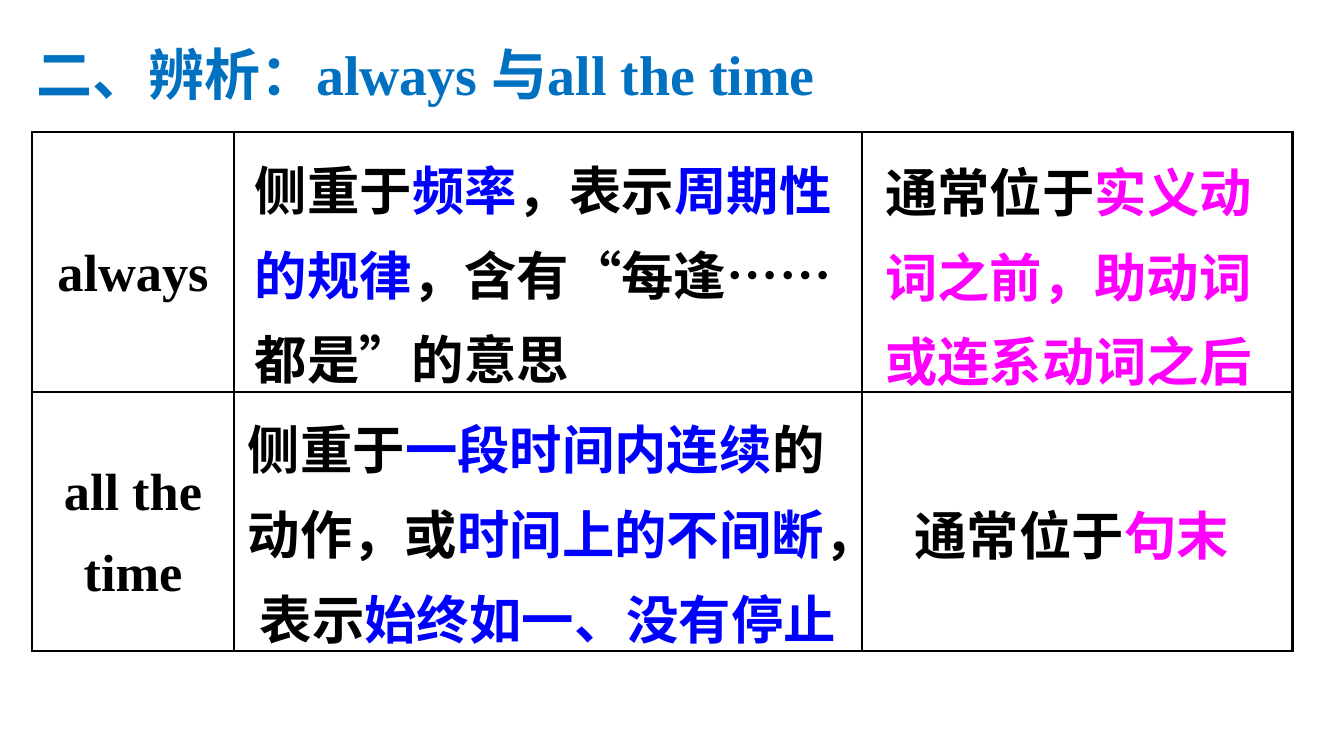
import pptx
import pptx.util
import pptx.dml.color
import pptx.enum.lang
import pptx.enum.text
import pptx.oxml.ns
import lxml.etree

Inches = pptx.util.Inches
Pt = pptx.util.Pt
RGBColor = pptx.dml.color.RGBColor
PP_ALIGN = pptx.enum.text.PP_ALIGN
MSO_ANCHOR = pptx.enum.text.MSO_ANCHOR
qn = pptx.oxml.ns.qn

BLACK = RGBColor(0x00, 0x00, 0x00)
BLUE = RGBColor(0x00, 0x00, 0xFF)
MAGENTA = RGBColor(0xFF, 0x00, 0xFF)
TITLE_BLUE = RGBColor(0x00, 0x70, 0xC0)
LATIN_FONT = "Times New Roman"
CHINESE_FONT = "Noto Sans CJK SC"


def style_paragraph(para, size, color, spacing, align):
    para.alignment = align
    para.line_spacing = spacing
    font = para.font
    font.size = Pt(size)
    font.bold = True
    font.color.rgb = color
    font.name = LATIN_FONT
    font.language_id = pptx.enum.lang.MSO_LANGUAGE_ID.SIMPLIFIED_CHINESE
    latin = para._p.pPr.find(qn("a:defRPr")).find(qn("a:latin"))
    east_asian = lxml.etree.Element(qn("a:ea"), typeface=CHINESE_FONT)
    latin.addnext(east_asian)


def set_border(cell, side, width):
    properties = cell._tc.get_or_add_tcPr()
    line = lxml.etree.SubElement(properties, qn("a:" + side), w=str(Pt(width)))
    fill = lxml.etree.SubElement(line, qn("a:solidFill"))
    lxml.etree.SubElement(fill, qn("a:srgbClr"), val=str(BLACK))


deck = pptx.Presentation()
deck.slide_width = Inches(13.33)
deck.slide_height = Inches(7.5)
page = deck.slides.add_slide(deck.slide_layouts[5])

title = page.shapes.title
title.left, title.top = Inches(0.26), Inches(0.34)
title.width, title.height = Inches(8.71), Inches(0.77)
title.text_frame.text = "二、辨析：always 与all the time"
title.text_frame.auto_size = pptx.enum.text.MSO_AUTO_SIZE.NONE
title.text_frame.vertical_anchor = MSO_ANCHOR.TOP
style_paragraph(title.text_frame.paragraphs[0], 40, TITLE_BLUE, 1.0, PP_ALIGN.LEFT)

terms = ["always", "all the time"]
column_widths = [2, 6.23, 4.27]
row_heights = [2.58, 2.57]
table = page.shapes.add_table(
    len(terms), len(column_widths), Inches(0.32), Inches(1.31), Inches(12.5), Inches(5.15)
).table
table.first_row = False
table.horz_banding = False
for column, width in zip(table.columns, column_widths):
    column.width = Inches(width)
for row, height in zip(table.rows, row_heights):
    row.height = Inches(height)

last_row = len(row_heights) - 1
last_column = len(column_widths) - 1
for row_index, term in enumerate(terms):
    for column_index in range(len(column_widths)):
        cell = table.cell(row_index, column_index)
        set_border(cell, "lnL", 2 if column_index == 0 else 1)
        set_border(cell, "lnR", 2 if column_index == last_column else 1)
        set_border(cell, "lnT", 2 if row_index == 0 else 1)
        set_border(cell, "lnB", 2 if row_index == last_row else 1)
        cell.fill.background()
    term_cell = table.cell(row_index, 0)
    term_cell.text = term
    term_cell.vertical_anchor = MSO_ANCHOR.MIDDLE
    term_cell.margin_left = term_cell.margin_right = Inches(0.13)
    term_cell.margin_top = term_cell.margin_bottom = Inches(0.06)
    style_paragraph(term_cell.text_frame.paragraphs[0], 37.4, BLACK, 1.4, PP_ALIGN.CENTER)

explanations = [
    (2.43, 1.3, 6.06, 2.65, True, [
        ("侧重于", BLACK), ("频率", BLUE), ("，表示", BLACK), ("周期性的规律", BLUE),
        ("，含有“每逢", BLACK), ("……", BLACK), ("都是”的意思", BLACK)]),
    (2.36, 3.87, 6.12, 2.65, True, [
        ("侧重于", BLACK), ("一段时间内连续", BLUE), ("的动作，或", BLACK),
        ("时间上的不间断", BLUE), ("， 表示", BLACK), ("始终如一、没有停止", BLUE)]),
    (8.68, 1.32, 4.26, 2.65, True, [
        ("通常位于", BLACK), ("实义动词之前，助动词或连系动词之后", MAGENTA)]),
    (8.97, 4.72, 3.33, 0.95, False, [("通常位于", BLACK), ("句末", MAGENTA)]),
]
for left, top, width, height, wraps, pieces in explanations:
    box = page.shapes.add_textbox(Inches(left), Inches(top), Inches(width), Inches(height))
    box.text_frame.word_wrap = wraps
    para = box.text_frame.paragraphs[0]
    style_paragraph(para, 37.4, BLACK, 1.35, PP_ALIGN.LEFT)
    for text, color in pieces:
        span = para.add_run()
        span.text = text
        if color != BLACK:
            span.font.color.rgb = color
        if text == "……":
            span.font.name = CHINESE_FONT

deck.save("out.pptx")
